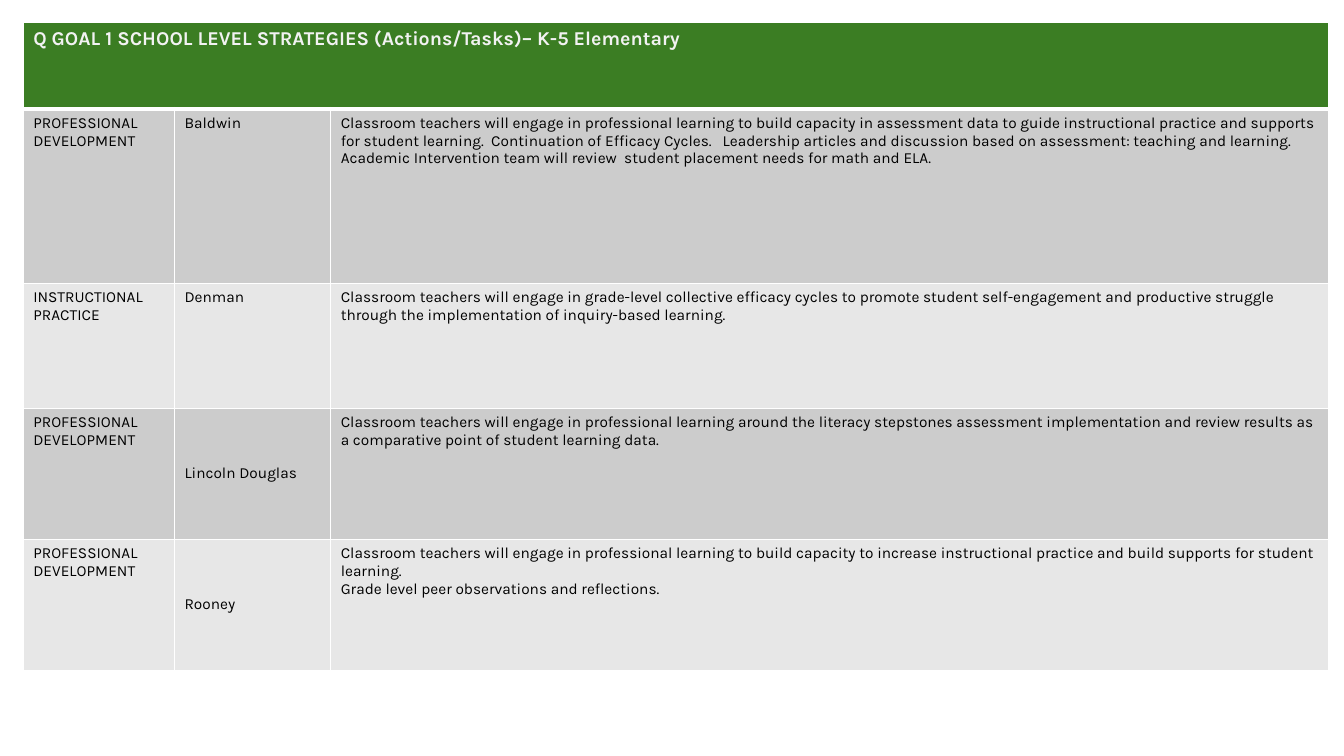
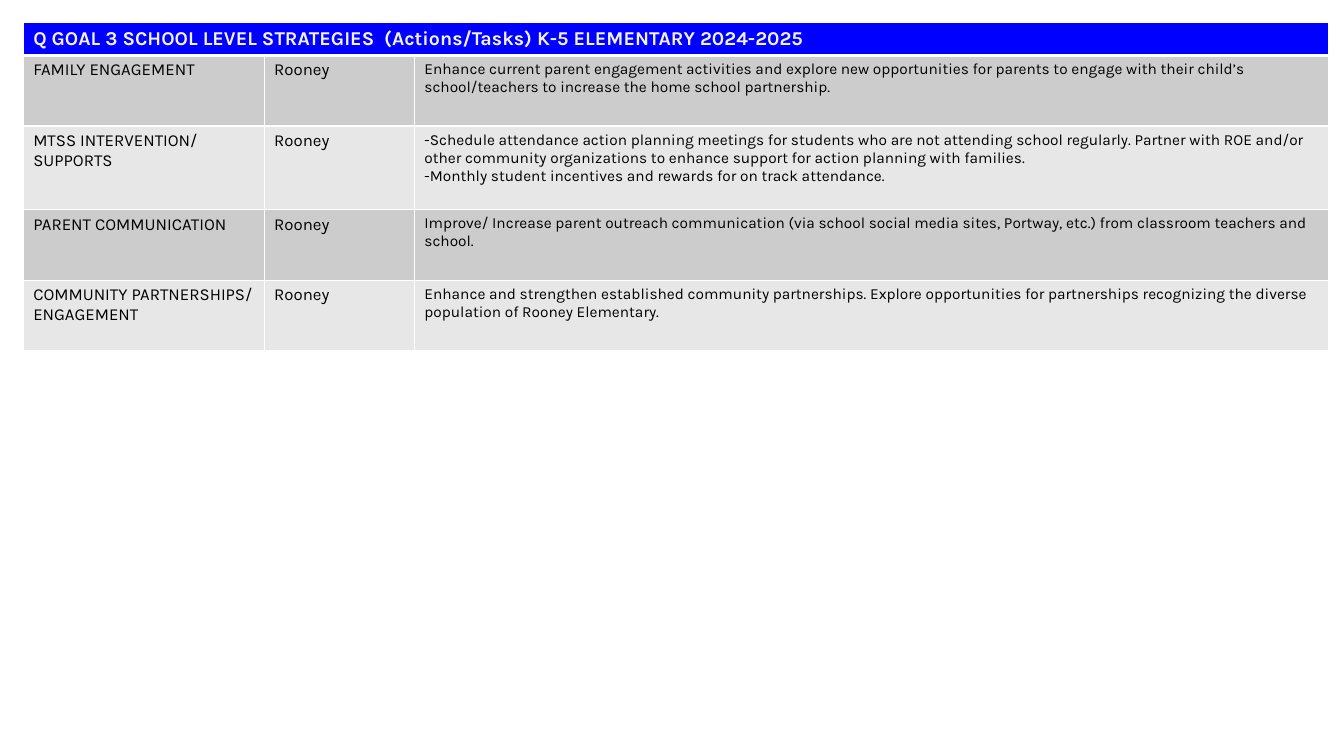
from dataclasses import dataclass

from lxml import etree
from pptx import Presentation
from pptx.dml import color
from pptx.enum import text
from pptx.oxml import ns
from pptx.util import Inches, Pt


@dataclass(frozen=True)
class Theme:
    font: str = "Karla"
    heading_size: int = 14
    body_size: int = 11
    heading_text: str = "F2F2F2"
    body_text: str = "000000"
    green: str = "3B7D23"
    blue: str = "0000FF"
    bands: tuple = ("CCCCCC", "E7E7E7")
    rule: str = "FFFFFF"
    thin: int = 1
    thick: int = 3


THEME = Theme()
TABLE_BOX = (0.23, 0.22, 12.95)  # left, top, width in inches
BLANK_LAYOUT = 6
TOP, MIDDLE = text.MSO_ANCHOR.TOP, text.MSO_ANCHOR.MIDDLE


def set_borders(cell, top, bottom):
    """Draw the four rules of a cell, before its fill is set."""
    props = cell._tc.get_or_add_tcPr()
    widths = {"lnL": THEME.thin, "lnR": THEME.thin, "lnT": top, "lnB": bottom}
    for side, width in widths.items():
        line = etree.SubElement(props, ns.qn(f"a:{side}"), w=str(Pt(width)))
        fill = etree.SubElement(line, ns.qn("a:solidFill"))
        etree.SubElement(fill, ns.qn("a:srgbClr"), val=THEME.rule)


def write_cell(cell, lines, size, ink, bold=False, anchor=TOP):
    cell.vertical_anchor = anchor
    frame = cell.text_frame
    for index, line in enumerate(lines):
        para = frame.add_paragraph() if index else frame.paragraphs[0]
        span = para.add_run()
        span.text = line
        span.font.name = THEME.font
        span.font.size = Pt(size)
        span.font.bold = bold
        span.font.color.rgb = color.RGBColor.from_string(ink)


def add_strategy_table(page, box, goal):
    """Heading band over banded rows of strategy, school and actions."""
    left, top, width = box
    heights = goal["heights"]
    first, second = goal["columns"]
    columns = (first, second, width - first - second)
    table = page.shapes.add_table(
        len(heights), len(columns), Inches(left), Inches(top),
        Inches(width), Inches(sum(heights))).table
    table.first_row = table.horz_banding = False
    for column, size in zip(table.columns, columns):
        column.width = Inches(size)

    # Rules and fills
    for index, (row, height) in enumerate(zip(table.rows, heights)):
        row.height = Inches(height)
        fill = THEME.bands[(index - 1) % 2] if index else goal["accent"]
        for cell in row.cells:
            set_borders(cell,
                        THEME.thick if index == 1 else THEME.thin,
                        THEME.thick if index == 0 else THEME.thin)
            cell.fill.solid()
            cell.fill.fore_color.rgb = color.RGBColor.from_string(fill)

    # Heading band
    heading = table.cell(0, 0)
    heading.merge(table.cell(0, len(columns) - 1))
    write_cell(heading, [goal["heading"]], THEME.heading_size,
               THEME.heading_text, bold=True)

    # Strategy rows
    label_size = goal["label_size"]
    for index, (strategy, school, actions) in enumerate(goal["rows"], 1):
        anchor = MIDDLE if index in goal["centred_schools"] else TOP
        write_cell(table.cell(index, 0), [strategy], label_size, THEME.body_text)
        write_cell(table.cell(index, 1), [school], label_size, THEME.body_text,
                   anchor=anchor)
        write_cell(table.cell(index, 2), actions, THEME.body_size,
                   THEME.body_text)


GOALS = [
    {
        "heading": "Q GOAL 1 SCHOOL LEVEL STRATEGIES (Actions/Tasks)– K-5 Elementary",
        "accent": THEME.green,
        "columns": (1.5, 1.55),
        "heights": (0.86, 1.73, 1.24, 1.3, 1.3),
        "label_size": 11,
        "centred_schools": (3, 4),
        "rows": [
            ("PROFESSIONAL DEVELOPMENT", "Baldwin", [
                "Classroom teachers will engage in professional learning to build "
                "capacity in assessment data to guide instructional practice and "
                "supports for student learning.  Continuation of Efficacy Cycles.   "
                "Leadership articles and discussion based on assessment: teaching "
                "and learning.  Academic Intervention team will review  student "
                "placement needs for math and ELA."]),
            ("INSTRUCTIONAL PRACTICE", "Denman", [
                "Classroom teachers will engage in grade-level collective efficacy "
                "cycles to promote student self-engagement and productive struggle "
                "through the implementation of inquiry-based learning."]),
            ("PROFESSIONAL DEVELOPMENT", "Lincoln Douglas", [
                "Classroom teachers will engage in professional learning around the "
                "literacy stepstones assessment implementation and review results as "
                "a comparative point of student learning data."]),
            ("PROFESSIONAL DEVELOPMENT", "Rooney", [
                "Classroom teachers will engage in professional learning to build "
                "capacity to increase instructional practice and build supports for "
                "student learning.",
                "Grade level peer observations and reflections."]),
        ],
    },
    {
        "heading": "Q GOAL 3 SCHOOL LEVEL STRATEGIES  (Actions/Tasks) "
                   "K-5 ELEMENTARY 2024-2025",
        "accent": THEME.blue,
        "columns": (2.39, 1.49),
        "heights": (0.33, 0.7, 0.83, 0.7, 0.7),
        "label_size": 12,
        "centred_schools": (),
        "rows": [
            ("FAMILY ENGAGEMENT", "Rooney", [
                "Enhance current parent engagement activities and explore new "
                "opportunities for parents to engage with their child’s "
                "school/teachers to increase the home school partnership."]),
            ("MTSS INTERVENTION/ SUPPORTS", "Rooney", [
                "-Schedule attendance action planning meetings for students who are "
                "not attending school regularly. Partner with ROE and/or other "
                "community organizations to enhance support for action planning "
                "with families.",
                "-Monthly student incentives and rewards for on track attendance."]),
            ("PARENT COMMUNICATION", "Rooney", [
                "Improve/ Increase parent outreach communication (via school social "
                "media sites, Portway, etc.) from classroom teachers and school."]),
            ("COMMUNITY PARTNERSHIPS/ ENGAGEMENT", "Rooney", [
                "Enhance and strengthen established community partnerships. Explore "
                "opportunities for partnerships recognizing the diverse population "
                "of Rooney Elementary."]),
        ],
    },
]


def main():
    deck = Presentation()
    deck.slide_width, deck.slide_height = Inches(13.33), Inches(7.5)
    for goal in GOALS:
        page = deck.slides.add_slide(deck.slide_layouts[BLANK_LAYOUT])
        add_strategy_table(page, TABLE_BOX, goal)
    deck.save("out.pptx")


if __name__ == "__main__":
    main()
